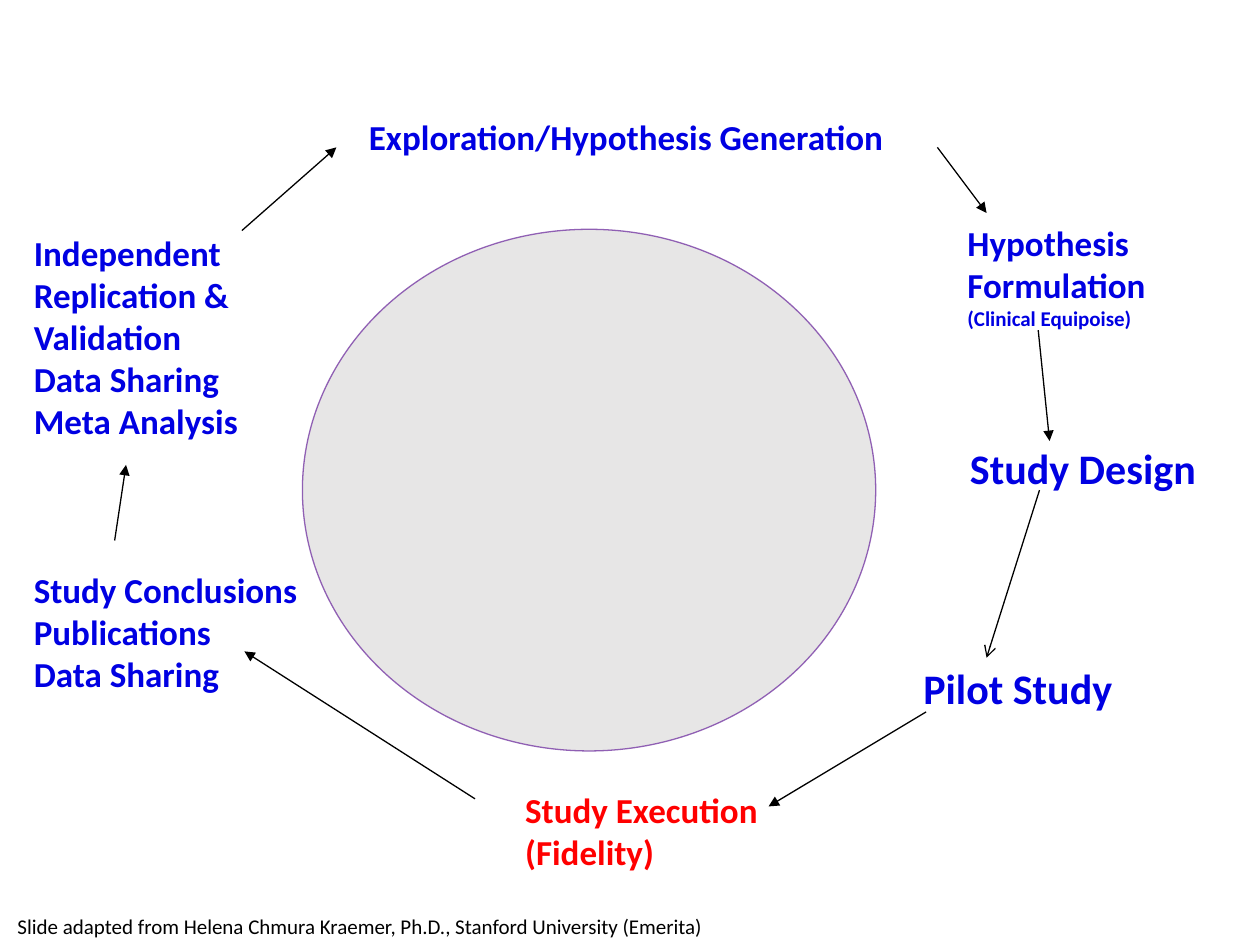
import pptx
import pptx.dml.color
import pptx.enum.shapes
import pptx.enum.text
import pptx.oxml.ns
import pptx.util
from lxml import etree

Inches = pptx.util.Inches
Pt = pptx.util.Pt
qn = pptx.oxml.ns.qn

COLORS = {
    "step": "0000E2",
    "execution": "FF0000",
    "ink": "000000",
    "hub": "E7E6E6",
    "hub_edge": "7030A0",
}

# Text lines, (left, top, width, height), format
STAGES = [
    (["Exploration/Hypothesis Generation"], (2.83, 0.87, 4.4, 0.44), {}),
    (["Hypothesis", "Formulation", "(Clinical Equipoise)"],
     (7.58, 1.71, 2.25, 0.98), {"last_size": 12}),
    (["Study Design"], (7.6, 3.46, 2.23, 0.5), {"size": 24}),
    (["Pilot Study"], (7.23, 5.21, 1.79, 0.5), {"size": 24, "wrap": False}),
    (["Study Execution", "(Fidelity)"], (4.07, 6.21, 2.07, 0.77),
     {"color": "execution", "wrap": False}),
    (["Study Conclusions", "Publications", "Data Sharing"],
     (0.17, 4.46, 2.5, 1.11), {}),
    (["Independent", "Replication &", "Validation", "Data Sharing",
      "Meta Analysis"], (0.17, 1.79, 2.29, 1.78), {}),
]

# Start, end, arrowhead; clockwise from the top
ARROWS = [
    ((7.44, 1.17), (7.83, 1.69), "triangle"),
    ((8.24, 2.62), (8.33, 3.5), "triangle"),
    ((8.25, 3.89), (7.83, 5.22), "arrow"),
    ((7.35, 5.65), (6.1, 6.4), "triangle"),
    ((3.77, 6.34), (1.94, 5.17), "triangle"),
    ((0.91, 4.29), (1, 3.69), "triangle"),
    ((1.92, 1.83), (2.67, 1.17), "triangle"),
]


def rgb(name):
    return pptx.dml.color.RGBColor.from_string(COLORS[name])


def add_text(slide, lines, box, *, size=20, last_size=None, color="step",
             bold=True, wrap=True):
    frame = slide.shapes.add_textbox(*map(Inches, box)).text_frame
    frame.word_wrap = wrap
    frame.auto_size = pptx.enum.text.MSO_AUTO_SIZE.SHAPE_TO_FIT_TEXT
    frame.text = "\n".join(lines)
    for paragraph in frame.paragraphs:
        font = paragraph.runs[0].font
        font.name = "Calibri"
        font.size = Pt(size)
        font.bold = bold
        font.color.rgb = rgb(color)
    if last_size:
        frame.paragraphs[-1].runs[0].font.size = Pt(last_size)


def add_hub(slide, box):
    hub = slide.shapes.add_shape(
        pptx.enum.shapes.MSO_SHAPE.OVAL, *map(Inches, box))
    hub.shadow.inherit = False
    hub.fill.solid()
    hub.fill.fore_color.rgb = rgb("hub")
    hub.line.color.rgb = rgb("hub_edge")
    hub.line.width = Pt(0.75)
    # Edge at 75 % opacity
    edge_color = hub.line._get_or_add_ln().find(".//" + qn("a:srgbClr"))
    etree.SubElement(edge_color, qn("a:alpha"), val="75000")


def add_arrow(slide, start, end, head):
    arrow = slide.shapes.add_connector(
        pptx.enum.shapes.MSO_CONNECTOR.STRAIGHT, *map(Inches, start + end))
    arrow.line.color.rgb = rgb("ink")
    arrow.line.width = Pt(0.75)
    etree.SubElement(arrow.line._get_or_add_ln(), qn("a:tailEnd"), type=head)
    etree.SubElement(arrow._element.spPr, qn("a:effectLst"))


def main():
    deck = pptx.Presentation()
    deck.slide_width, deck.slide_height = Inches(10), Inches(7.5)
    slide = deck.slides.add_slide(deck.slide_layouts[6])

    # Centre of the research cycle
    add_hub(slide, (2.4, 1.82, 4.55, 4.14))

    # Stages and the arrows between them
    for lines, box, text_format in STAGES:
        add_text(slide, lines, box, **text_format)
    for start, end, head in ARROWS:
        add_arrow(slide, start, end, head)

    # Source line
    add_text(slide, ["Slide adapted from Helena Chmura Kraemer, Ph.D., "
                     "Stanford University (Emerita)"],
             (0.04, 7.2, 7.5, 0.3), size=12, color="ink", bold=False)

    deck.save("out.pptx")


if __name__ == "__main__":
    main()
